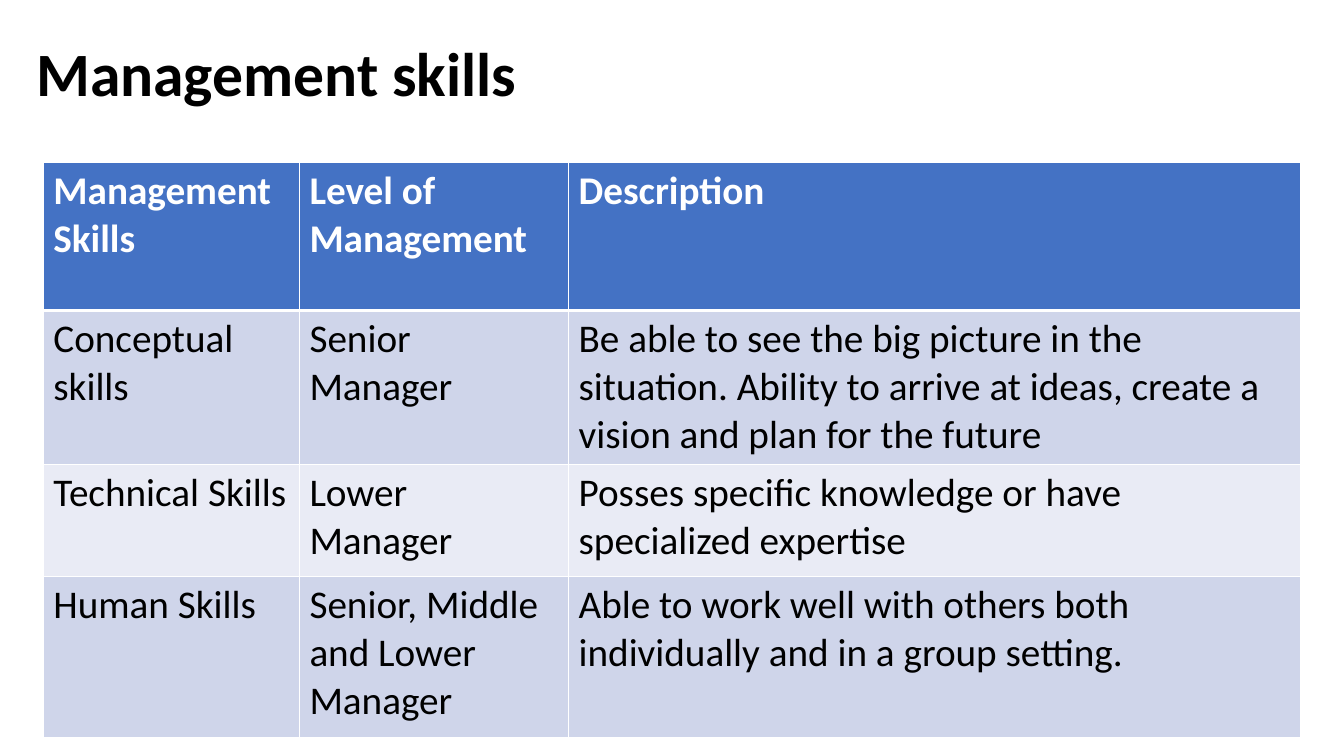
from lxml.etree import SubElement
from pptx import Presentation
from pptx.dml.color import RGBColor
from pptx.enum.text import MSO_ANCHOR, MSO_AUTO_SIZE, PP_ALIGN
from pptx.oxml.ns import qn
from pptx.util import Inches, Pt

BLACK = RGBColor(0x00, 0x00, 0x00)
WHITE = RGBColor(0xFF, 0xFF, 0xFF)
HEADER_BLUE = RGBColor(0x44, 0x72, 0xC4)
BAND_DARK = RGBColor(0xCF, 0xD5, 0xEA)
BAND_LIGHT = RGBColor(0xE9, 0xEB, 0xF5)

COLUMN_WIDTHS = [2.54, 2.67, 7.26]
ROW_HEIGHTS = [1.47, 1.47, 1.11, 1.6]
SKILLS = [
    ("Management Skills", "Level of Management", "Description"),
    ("Conceptual skills", "Senior Manager",
     "Be able to see the big picture in the situation. "
     "Ability to arrive at ideas, create a vision and plan for the future"),
    ("Technical Skills", "Lower Manager",
     "Posses specific knowledge or have specialized expertise"),
    ("Human Skills", "Senior, Middle and Lower Manager",
     "Able to work well with others both individually and in a group setting."),
]


class SlideBuilder:
    font_name = "Calibri"
    title_size = Pt(44)
    table_size = Pt(28)

    def __init__(self, page):
        self.page = page

    def style(self, para, size, color, bold):
        para.font.name = self.font_name
        para.font.size = size
        para.font.bold = bold
        para.font.color.rgb = color

    def title(self, text, left, top, width, height):
        box = self.page.shapes.title
        box.left, box.top = Inches(left), Inches(top)
        box.width, box.height = Inches(width), Inches(height)
        frame = box.text_frame
        frame.text = text
        frame.word_wrap = True
        frame.auto_size = MSO_AUTO_SIZE.NONE
        frame.vertical_anchor = MSO_ANCHOR.MIDDLE
        para = frame.paragraphs[0]
        para.alignment = PP_ALIGN.LEFT
        para.line_spacing = 0.9
        self.style(para, self.title_size, BLACK, True)

    def borders(self, cell, top, bottom):
        properties = cell._tc.get_or_add_tcPr()
        for side, points in (("L", 1), ("R", 1), ("T", top), ("B", bottom)):
            line = SubElement(properties, qn(f"a:ln{side}"), w=str(Pt(points)))
            fill = SubElement(line, qn("a:solidFill"))
            SubElement(fill, qn("a:srgbClr"), val=str(WHITE))

    def cell(self, cell, text, row):
        header = row == 0
        self.borders(cell, 3 if row == 1 else 1, 3 if header else 1)
        cell.fill.solid()
        band = BAND_DARK if row % 2 else BAND_LIGHT
        cell.fill.fore_color.rgb = HEADER_BLUE if header else band
        cell.text = text
        para = cell.text_frame.paragraphs[0]
        self.style(para, self.table_size, WHITE if header else BLACK, header)

    def table(self, rows, left, top, widths, heights):
        table = self.page.shapes.add_table(
            len(rows), len(widths), Inches(left), Inches(top),
            Inches(sum(widths)), Inches(sum(heights))).table
        for column, width in zip(table.columns, widths):
            column.width = Inches(width)
        for row, height in zip(table.rows, heights):
            row.height = Inches(height)
        for index, texts in enumerate(rows):
            for column, text in enumerate(texts):
                self.cell(table.cell(index, column), text, index)


def main():
    deck = Presentation()
    deck.slide_width, deck.slide_height = Inches(13.33), Inches(7.5)
    builder = SlideBuilder(deck.slides.add_slide(deck.slide_layouts[5]))
    builder.title("Management skills", 0.26, 0.03, 11.5, 1.45)
    builder.table(SKILLS, 0.43, 1.61, COLUMN_WIDTHS, ROW_HEIGHTS)
    deck.save("out.pptx")


if __name__ == "__main__":
    main()
